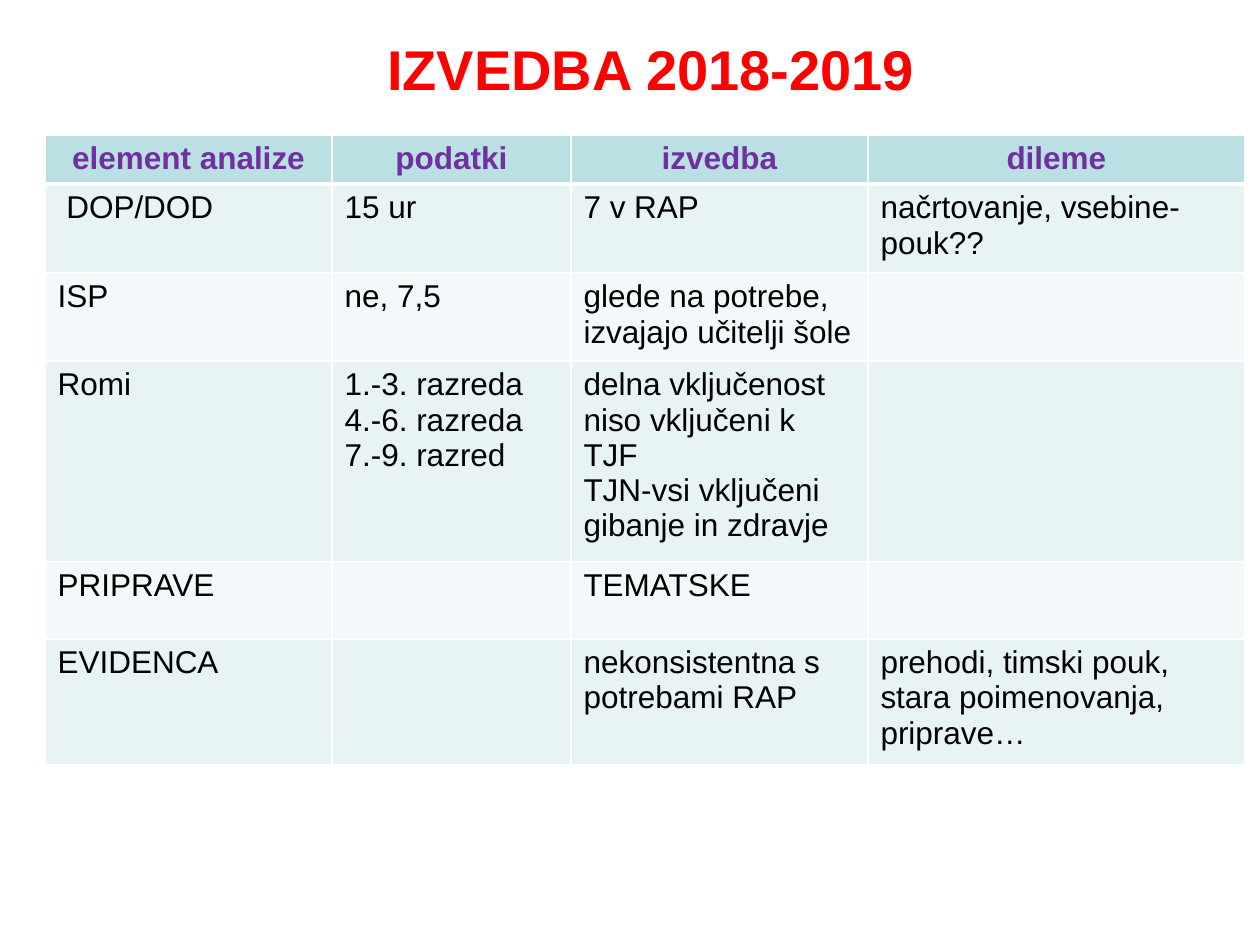
"""Build the slide with the table of the 2018-2019 school work."""
from typing import NamedTuple

from lxml.etree import SubElement
from pptx import Presentation
from pptx.dml.color import RGBColor
from pptx.enum.text import MSO_ANCHOR as Anchor, PP_ALIGN as Align
from pptx.oxml.ns import qn
from pptx.util import Emu, Pt

EMU_PER_PX = 914400 // 126
FONT = "Arial"
BLACK, WHITE, RED, PURPLE = "000000", "FFFFFF", "FF0000", "7030A0"
HEADER_FILL, BAND_FILLS = "BBE0E3", ("E7F3F4", "F3F9FA")


class Row(NamedTuple):
    """One table row: its height in px and its cell texts."""
    height: int
    texts: tuple[str, ...]


COLUMN_WIDTHS = (287, 239, 297, 377)
ROWS = (
    Row(49, ("element analize", "podatki", "izvedba", "dileme")),
    Row(89, (" DOP/DOD", "15 ur", "7 v RAP", "načrtovanje, vsebine-pouk??")),
    Row(88, ("ISP", "ne, 7,5", "glede na potrebe,\nizvajajo učitelji šole", "")),
    Row(201, ("Romi", "1.-3. razreda\n4.-6. razreda\n7.-9. razred",
              "delna vključenost\nniso vključeni k TJF\nTJN-vsi vključeni\ngibanje in zdravje", "")),
    Row(77, ("PRIPRAVE", "", "TEMATSKE", "")),
    Row(126, ("EVIDENCA", "", "nekonsistentna s potrebami RAP",
              "prehodi, timski pouk, stara poimenovanja, priprave…")),
)


def px(length: int) -> Emu:
    """Turn px into EMU."""
    return Emu(length * EMU_PER_PX)


def rgb(value: str) -> RGBColor:
    """Turn a hex string into a colour."""
    return RGBColor.from_string(value)


def write(frame, text: str, *, size: int = 18, color: str = BLACK,
          bold: bool = False, align: Align = Align.LEFT) -> None:
    """Fill a text frame and format every paragraph."""
    frame.text = text
    frame.word_wrap = True
    for paragraph in frame.paragraphs:
        paragraph.alignment = align
        for font in [paragraph.font, *(run.font for run in paragraph.runs)]:
            font.name, font.size, font.bold = FONT, Pt(size), bold
            font.color.rgb = rgb(color)


def add_borders(cell, top: int, bottom: int) -> None:
    """Give a cell white borders, with widths in points."""
    properties = cell._tc.get_or_add_tcPr()
    for side, width in (("L", 1), ("R", 1), ("T", top), ("B", bottom)):
        border = SubElement(properties, qn(f"a:ln{side}"), w=str(Pt(width)))
        SubElement(SubElement(border, qn("a:solidFill")), qn("a:srgbClr"), val=WHITE)


def add_title(slide, text: str) -> None:
    """Place and format the slide title."""
    title = slide.shapes.title
    title.left, title.top, title.width, title.height = px(84), px(23), px(1134), px(77)
    frame = title.text_frame
    write(frame, text, size=32, color=RED, bold=True, align=Align.CENTER)
    frame.vertical_anchor = Anchor.TOP
    frame.margin_top, frame.margin_bottom = px(11), px(0)


def add_analysis_table(slide) -> None:
    """Draw the table with its header and banded rows."""
    table = slide.shapes.add_table(
        len(ROWS), len(COLUMN_WIDTHS), px(45), px(135),
        px(sum(COLUMN_WIDTHS)), px(sum(row.height for row in ROWS))).table
    for column, width in zip(table.columns, COLUMN_WIDTHS):
        column.width = px(width)
    for index, row in enumerate(ROWS):
        table.rows[index].height = px(row.height)
        header = index == 0
        for column_index, text in enumerate(row.texts):
            cell = table.cell(index, column_index)
            add_borders(cell, top=3 if index == 1 else 1, bottom=3 if header else 1)
            cell.fill.solid()
            cell.fill.fore_color.rgb = rgb(HEADER_FILL if header else BAND_FILLS[(index - 1) % 2])
            write(cell.text_frame, text, color=PURPLE if header else BLACK,
                  bold=header, align=Align.CENTER if header else Align.LEFT)


def main() -> None:
    """Build and save the presentation."""
    deck = Presentation()
    deck.slide_width, deck.slide_height = px(1260), px(945)
    slide = deck.slides.add_slide(deck.slide_layouts[5])
    add_analysis_table(slide)
    add_title(slide, "IZVEDBA 2018-2019")
    deck.save("out.pptx")


if __name__ == "__main__":
    main()
